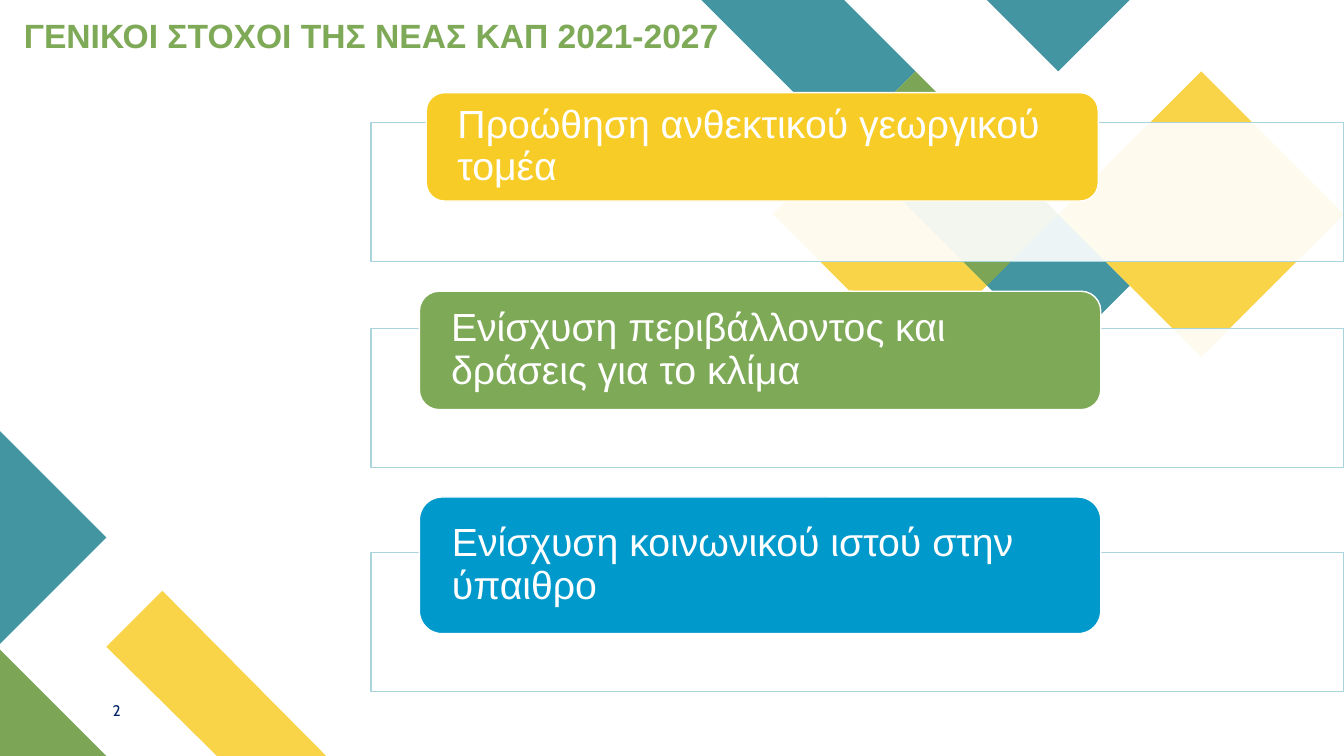
from lxml import etree
from pptx import Presentation
from pptx.dml.color import RGBColor
from pptx.enum.shapes import MSO_SHAPE
from pptx.enum.text import MSO_ANCHOR, PP_ALIGN
from pptx.oxml.ns import qn
from pptx.util import Pt

WHITE = RGBColor(0xFF, 0xFF, 0xFF)
TEAL = RGBColor(0x44, 0x95, 0xA2)
YELLOW = RGBColor(0xF9, 0xD4, 0x48)
GREEN = RGBColor(0x7C, 0xA6, 0x55)
GOLD = RGBColor(0xF8, 0xCC, 0x27)
LEAF = RGBColor(0x7E, 0xA9, 0x57)
BLUE = RGBColor(0x00, 0x99, 0xCC)
FRAME_LINE = RGBColor(0xA9, 0xD4, 0xDB)
NAVY = RGBColor(0x00, 0x23, 0x68)

SLIDE_W, SLIDE_H = 960, 540
UNIT = 51  # half diagonal of a small diamond
FRAME_LEFT, FRAME_W, FRAME_H = 265, 695, 99.4

# Upper right diamonds: steps of UNIT from the right edge and from the top
DIAMONDS = [
    (TEAL, [[(6, 1), (7, 0), (9, 0), (7, 2)], [(3, 4), (4, 3), (5, 4), (4, 5)]]),
    (YELLOW, [[(7, 2), (8, 3), (6, 5), (5, 4)]]),
    (TEAL, [[(3, 0), (5, 0), (4, 1)]]),
    (GREEN, [[(6, 1), (7, 2), (5, 4), (4, 3)]]),
    (YELLOW, [[(0, 3), (2, 1), (4, 3), (2, 5)]]),
]

# Lower left pieces, in points
CORNER = [
    (YELLOW, [[(233, 540), (155, 540), (76.5, 461.5), (116, 422.5)]]),
    (GREEN, [[(76.5, 540), (0, 540), (0, 463.5)]]),
    (TEAL, [[(0, 307.5), (76.5, 384), (0, 460.5)]]),
]

# Frame top, bar (left, top, width, height), bar colour, text
GOALS = [
    (87.4, (304.5, 66.2, 480, 77.4), GOLD,
     "Προώθηση ανθεκτικού γεωργικού τομέα"),
    (234.6, (299.6, 208, 486.7, 84.6), LEAF,
     "Ενίσχυση περιβάλλοντος και δράσεις για το κλίμα"),
    (394.5, (299.6, 355, 486.7, 97.6), BLUE,
     "Ενίσχυση κοινωνικού ιστού στην ύπαιθρο"),
]


def add_polygon(slide, color, contours):
    start = contours[0][0]
    builder = slide.shapes.build_freeform(*start, scale=Pt(1))
    for i, points in enumerate(contours):
        if i:
            builder.move_to(*points[0])
        builder.add_line_segments(points[1:], close=True)
    sp = builder.convert_to_shape()
    sp.shadow.inherit = False
    sp.fill.solid()
    sp.fill.fore_color.rgb = color
    sp.line.fill.background()


def add_box(slide, kind, box, fill, line):
    sp = slide.shapes.add_shape(kind, *map(Pt, box))
    sp.shadow.inherit = False
    sp.fill.solid()
    sp.fill.fore_color.rgb = fill
    sp.line.color.rgb = line
    sp.line.width = Pt(1)
    return sp


def set_opacity(sp, percent):
    color = sp._element.spPr.find(qn("a:solidFill"))[0]
    etree.SubElement(color, qn("a:alpha")).set("val", str(percent * 1000))


def write(sp, text, font, size, color, bold=False):
    tf = sp.text_frame
    tf.word_wrap = True
    tf.text = text
    p = tf.paragraphs[0]
    p.alignment = PP_ALIGN.LEFT
    r = p.runs[0]
    r.font.name = font
    r.font.size = Pt(size)
    r.font.bold = bold
    r.font.color.rgb = color
    return tf


def add_label(slide, box, text, font, size, color, bold=False):
    sp = slide.shapes.add_textbox(*map(Pt, box))
    write(sp, text, font, size, color, bold)


def add_goal(slide, frame_top, bar_box, color, text):
    frame = add_box(slide, MSO_SHAPE.RECTANGLE,
                    (FRAME_LEFT, frame_top, FRAME_W, FRAME_H), WHITE, FRAME_LINE)
    set_opacity(frame, 90)
    bar = add_box(slide, MSO_SHAPE.ROUNDED_RECTANGLE, bar_box, color, WHITE)
    tf = write(bar, text, "Arial", 28, WHITE)
    tf.vertical_anchor = MSO_ANCHOR.MIDDLE
    tf.margin_left = tf.margin_right = Pt(18.5)
    tf.margin_top = tf.margin_bottom = 0
    tf.paragraphs[0].line_spacing = 0.9


def main():
    prs = Presentation()
    prs.slide_width, prs.slide_height = Pt(SLIDE_W), Pt(SLIDE_H)
    slide = prs.slides.add_slide(prs.slide_layouts[6])

    # Decoration
    for color, contours in DIAMONDS:
        add_polygon(slide, color, [[(SLIDE_W - UNIT * x, UNIT * y) for x, y in points]
                                   for points in contours])
    for color, contours in CORNER:
        add_polygon(slide, color, contours)

    # Goals
    for goal in GOALS:
        add_goal(slide, *goal)

    # Slide number and title
    add_label(slide, (73.4, 497.5, 41, 19.4), "2", "Cabin", 11, NAVY)
    add_label(slide, (10, 7.2, 556, 36), "ΓΕΝΙΚΟΙ ΣΤΟΧΟΙ ΤΗΣ ΝΕΑΣ ΚΑΠ 2021-2027",
              "Arial", 24, LEAF, bold=True)

    prs.save("out.pptx")


if __name__ == "__main__":
    main()
